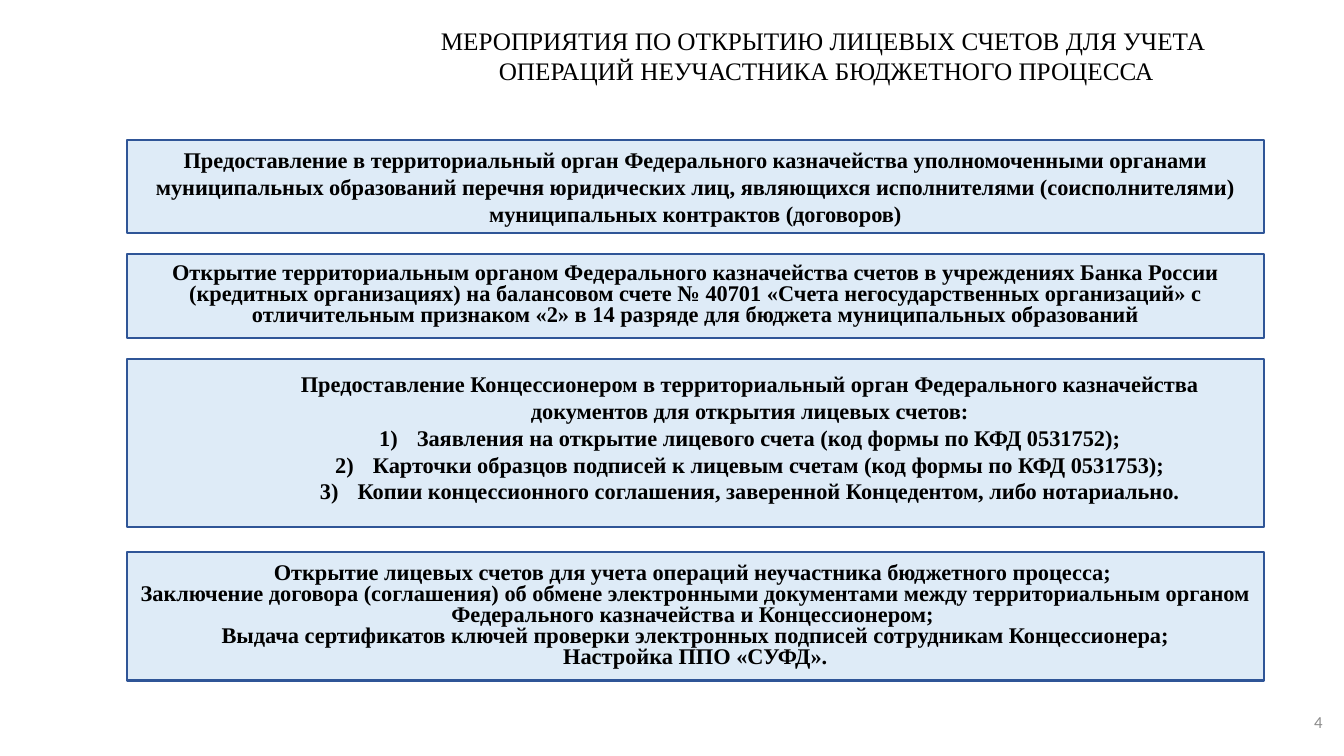
from pptx import Presentation
from pptx.dml.color import RGBColor
from pptx.enum.shapes import MSO_SHAPE
from pptx.enum.text import MSO_ANCHOR, MSO_AUTO_SIZE, PP_ALIGN
from pptx.oxml.ns import qn
from pptx.util import Cm, Pt
from lxml import etree

RECT = MSO_SHAPE.RECTANGLE
TOP, MIDDLE = MSO_ANCHOR.TOP, MSO_ANCHOR.MIDDLE
CENTER, RIGHT = PP_ALIGN.CENTER, PP_ALIGN.RIGHT
FIXED = MSO_AUTO_SIZE.NONE

# Content
TITLE = ["МЕРОПРИЯТИЯ ПО ОТКРЫТИЮ ЛИЦЕВЫХ СЧЕТОВ ДЛЯ УЧЕТА ",
         "ОПЕРАЦИЙ НЕУЧАСТНИКА БЮДЖЕТНОГО ПРОЦЕССА"]
LEAD = ("Предоставление Концессионером в территориальный орган Федерального "
        "казначейства документов для открытия лицевых счетов:")
PAPERS = ["Заявления на открытие лицевого счета (код формы по КФД 0531752);",
          "Карточки образцов подписей к лицевым счетам (код формы по КФД 0531753);",
          "Копии концессионного соглашения, заверенной Концедентом, либо нотариально."]
# Steps: top and height in cm, line pitch in points, paragraphs
STEPS = [
    (3.53, 2.34, None, [
        "Предоставление в территориальный орган Федерального казначейства "
        "уполномоченными органами муниципальных образований перечня юридических лиц, "
        "являющихся исполнителями (соисполнителями) муниципальных контрактов (договоров)"]),
    (6.4, 2.11, 15, [
        "Открытие территориальным органом Федерального казначейства счетов в "
        "учреждениях Банка России (кредитных организациях) на балансовом счете № 40701 "
        "«Счета негосударственных организаций» с отличительным признаком «2» в 14 "
        "разряде для бюджета муниципальных образований"]),
    (9.04, 4.24, None, []),
    (13.92, 3.23, 15, [
        "Открытие лицевых счетов для учета операций неучастника бюджетного процесса; ",
        "Заключение договора (соглашения) об обмене электронными документами между "
        "территориальным органом Федерального казначейства и Концессионером; ",
        "Выдача сертификатов ключей проверки электронных подписей сотрудникам "
        "Концессионера;",
        "Настройка ППО «СУФД»."]),
]
PAGE = "4"

# Format
COLORS = {"text": "000000", "fill": "DEEBF7", "line": "2F5597", "page": "8C8C8C"}
SERIF = "Times New Roman"
HEAD = {"size": Pt(18), "name": SERIF, "bold": False}
BODY = {"size": Pt(16), "name": SERIF, "bold": True}
FOOT = {"size": Pt(12), "name": "Calibri", "bold": False}
LEFT, WIDTH = 3.2, 28.65
INDENT = Cm(0.95)


def color(key):
    return RGBColor.from_string(COLORS[key])


def place(shape, left, top, width, height):
    spots = {"left": left, "top": top, "width": width, "height": height}
    for name, value in spots.items():
        setattr(shape, name, Cm(value))


def write(shape, lines, font, anchor=TOP, align=CENTER, pitch=None, tint="text"):
    frame = shape.text_frame
    setup = {"word_wrap": True, "auto_size": FIXED, "vertical_anchor": anchor}
    for name, value in setup.items():
        setattr(frame, name, value)
    for i, line in enumerate(lines):
        para = frame.add_paragraph() if i else frame.paragraphs[0]
        para.alignment = align
        para.space_before = Pt(0)
        if pitch:
            para.line_spacing = Pt(pitch)
        run = para.add_run()
        run.text = line
        for name, value in font.items():
            setattr(run.font, name, value)
        run.font.color.rgb = color(tint)
    return frame


def mark(para, tag, indent=0, **attrs):
    props = para._p.get_or_add_pPr()
    props.set("marL", str(indent))
    props.set("indent", str(-indent))
    etree.SubElement(props, qn(tag), attrs)


deck = Presentation()
deck.slide_width, deck.slide_height = Cm(33.87), Cm(19.05)
slide = deck.slides.add_slide(deck.slide_layouts[1])
shapes = slide.shapes

# Title
place(shapes.title, 9.45, 0.5, 22.75, 1.8)
write(shapes.title, TITLE, HEAD)

# Step boxes
for top, height, pitch, lines in STEPS:
    box = shapes.add_shape(RECT, Cm(LEFT), Cm(top), Cm(WIDTH), Cm(height))
    box.shadow.inherit = False
    box.fill.solid()
    box.fill.fore_color.rgb = color("fill")
    box.line.color.rgb = color("line")
    box.line.width = Pt(1.5)
    frame = write(box, lines, BODY, MIDDLE, pitch=pitch)
    frame.margin_left = frame.margin_right = Cm(0.23)
    frame.margin_top = frame.margin_bottom = Cm(0.1)

# Numbered list, in front of the third box
body = slide.placeholders[1]
place(body, 5.92, 9.2, 25.95, 4.37)
lead, *items = write(body, [LEAD] + PAPERS, BODY).paragraphs
mark(lead, "a:buNone")
for item in items:
    mark(item, "a:buAutoNum", INDENT, type="arabicParenR")
body._element.getparent().append(body._element)

# Page number
page = shapes.add_textbox(Cm(25.96), Cm(17.68), Cm(7.62), Cm(1.02))
write(page, [PAGE], FOOT, MIDDLE, RIGHT, tint="page")

deck.save("out.pptx")
